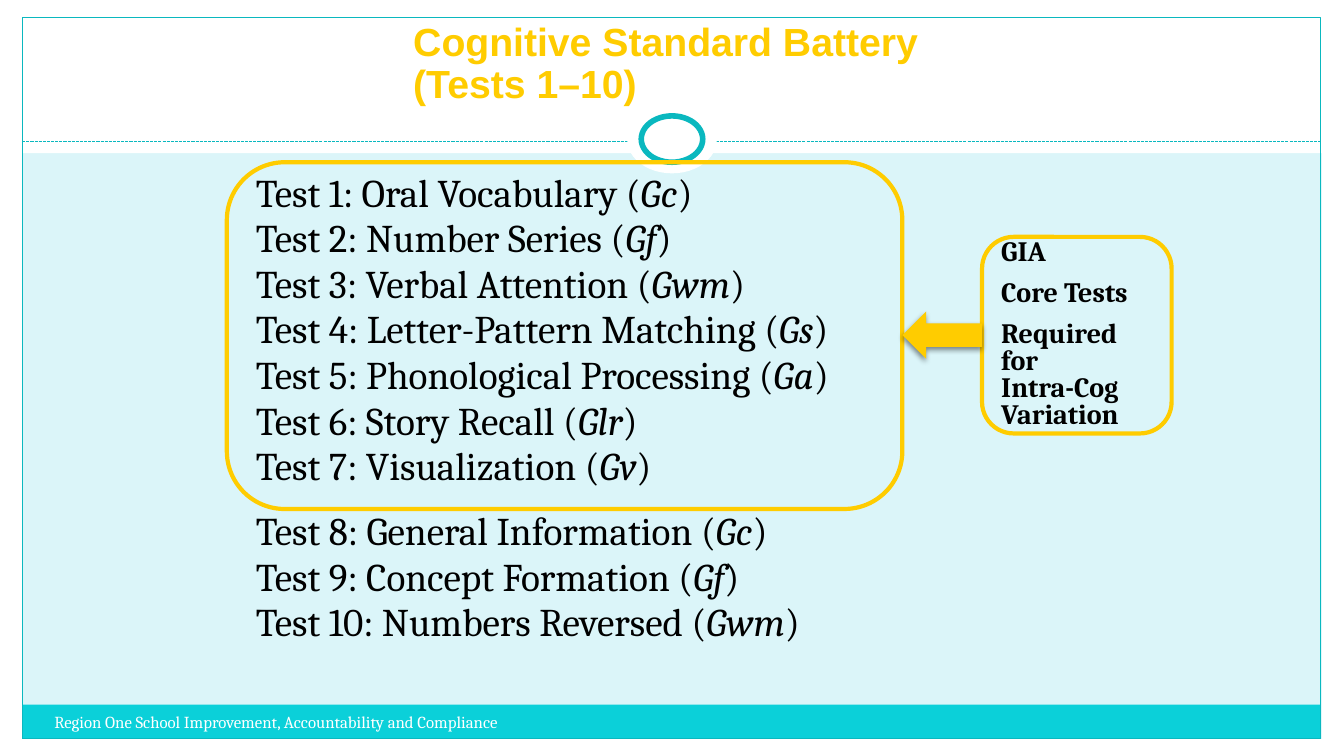
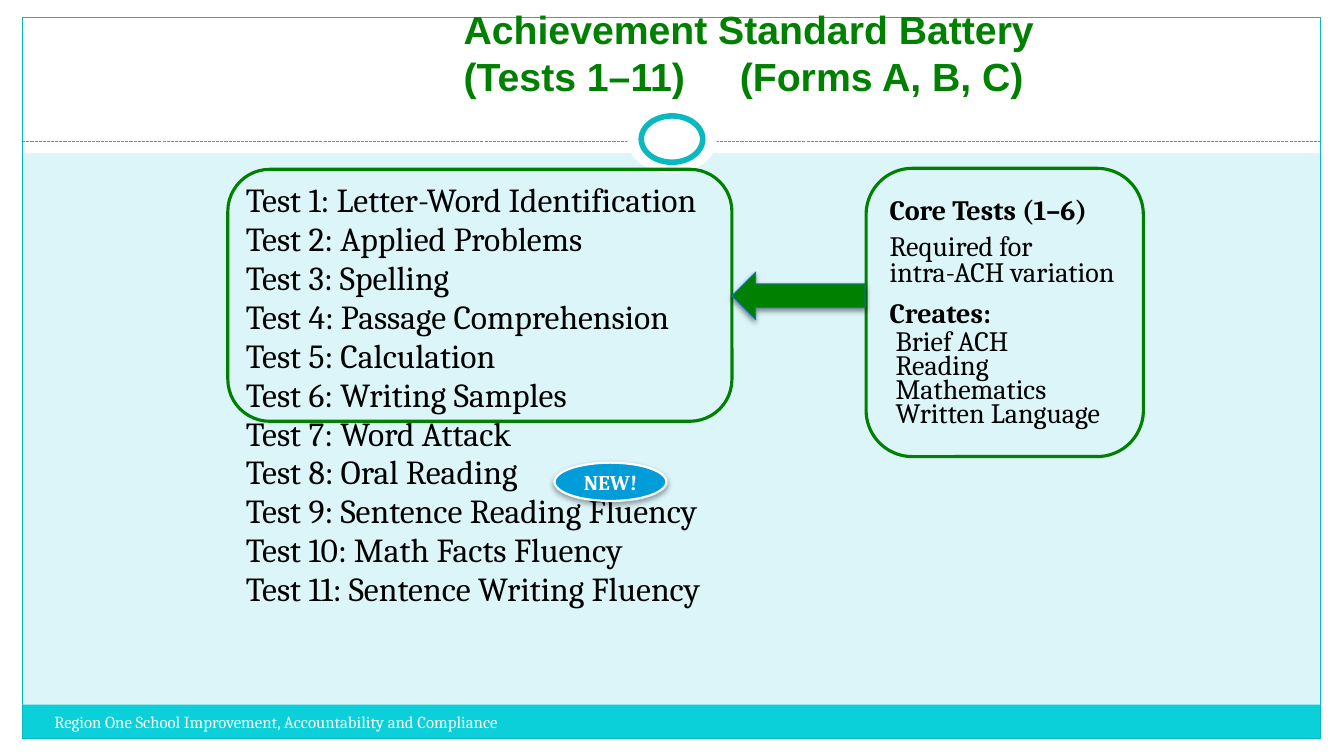
from lxml.etree import SubElement
from pptx import Presentation
from pptx.dml.color import RGBColor
from pptx.enum.dml import MSO_LINE
from pptx.enum.shapes import MSO_CONNECTOR, MSO_SHAPE
from pptx.enum.text import MSO_ANCHOR, PP_ALIGN
from pptx.oxml.ns import qn
from pptx.util import Pt

PX = 9144  # 100 px to the inch
WIDE, HIGH = 1333, 750

WHITE = RGBColor(0xFF, 0xFF, 0xFF)
BLACK = RGBColor(0x00, 0x00, 0x00)
PALE = RGBColor(0xDB, 0xF5, 0xF9)
AQUA = RGBColor(0x0B, 0xD0, 0xD9)
TEAL = RGBColor(0x0A, 0xB8, 0xBF)
GOLD = RGBColor(0xFF, 0xCC, 0x00)
GREEN = RGBColor(0x00, 0x80, 0x00)
BLUE = RGBColor(0x0F, 0x6F, 0xC6)
SKY = RGBColor(0x00, 0x9D, 0xD9)

HEAD, BODY = "Arial", "Cambria"


def draw(slide, kind, at, fill=None, line=None, width=0.75, shade=0):
    """Add a shape (or a text box when kind is None); shade is shadow opacity."""
    spot = [n * PX for n in at]
    if kind is None:
        return slide.shapes.add_textbox(*spot)
    shape = slide.shapes.add_shape(kind, *spot)
    shape.shadow.inherit = False
    if fill is None:
        shape.fill.background()
    else:
        shape.fill.solid()
        shape.fill.fore_color.rgb = fill
    if line is None:
        shape.line.fill.background()
    else:
        shape.line.color.rgb = line
        shape.line.width = Pt(width)
    if shade:
        glow = shape._element.spPr.find(qn("a:effectLst"))
        cast = SubElement(glow, qn("a:outerShdw"), blurRad=str(Pt(4)),
                          dist=str(Pt(2)), dir="5400000", rotWithShape="0")
        tint = SubElement(cast, qn("a:srgbClr"), val="000000")
        SubElement(tint, qn("a:alpha"), val=str(shade * 1000))
    return shape


def write(shape, rows, size, color=BLACK, font=BODY, anchor=MSO_ANCHOR.TOP,
          align=PP_ALIGN.LEFT):
    """Rows are (text, line spacing, points before, bold); *stars* mark italics."""
    frame = shape.text_frame
    frame.word_wrap = True
    frame.vertical_anchor = anchor
    for i, (text, gap, before, bold) in enumerate(rows):
        para = frame.add_paragraph() if i else frame.paragraphs[0]
        first, *rest = text.split("*")
        para.text = first
        for part in rest:
            para.add_run().text = part
        para.alignment = align
        para.line_spacing = gap
        para.space_before = Pt(before)
        for n, run in enumerate(para.runs):
            run.font.name = font
            run.font.size = Pt(size)
            run.font.bold = bold
            run.font.italic = bool(rest) and n == 1
            run.font.color.rgb = color
    return frame


deck = Presentation()
deck.slide_width, deck.slide_height = WIDE * PX, HIGH * PX

BANDS = [
    ((0, 733, WIDE, 17), WHITE),
    ((0, 0, WIDE, 152), WHITE),
    ((0, 0, 22, HIGH), WHITE),
    ((1311, 0, 22, HIGH), WHITE),
    ((22, 699, 1288, 34), AQUA),
]

# Frame shared by both slides
slides = []
for _ in range(2):
    slide = deck.slides.add_slide(deck.slide_layouts[6])
    slides.append(slide)
    slide.background.fill.solid()
    slide.background.fill.fore_color.rgb = PALE
    for at, fill in BANDS:
        draw(slide, MSO_SHAPE.RECTANGLE, at, fill)
    draw(slide, MSO_SHAPE.RECTANGLE, (22, 17, 1288, 716), line=TEAL)
    rule = slide.shapes.add_connector(
        MSO_CONNECTOR.STRAIGHT, 22 * PX, 140 * PX, 1310 * PX, 140 * PX)
    rule.line.color.rgb = TEAL
    rule.line.width = Pt(0.75)
    rule.line.dash_style = MSO_LINE.SQUARE_DOT
    SubElement(rule._element.spPr, qn("a:effectLst"))
    draw(slide, MSO_SHAPE.OVAL, (622, 105, 89, 67), WHITE)
    draw(slide, MSO_SHAPE.OVAL, (636, 115, 61, 46), WHITE, TEAL, 4)
    foot = draw(slide, None, (44, 701, 522, 40))
    write(foot, [("Region One School Improvement, Accountability and Compliance",
                  1.0, 0, False)], 12, WHITE)

cog, ach = slides

# Cognitive: title and tests
title = draw(cog, None, (400, -14, 721, 125))
write(title, [("Cognitive Standard Battery\v(Tests 1–10)", 0.9, 0, True)],
      28, GOLD, HEAD, MSO_ANCHOR.BOTTOM)
TESTS = [
    ("Oral Vocabulary", "Gc"), ("Number Series", "Gf"),
    ("Verbal Attention", "Gwm"), ("Letter-Pattern Matching", "Gs"),
    ("Phonological Processing", "Ga"), ("Story Recall", "Glr"),
    ("Visualization", "Gv"), ("General Information", "Gc"),
    ("Concept Formation", "Gf"), ("Numbers Reversed", "Gwm"),
]
CORE = 7  # the tests after these stand apart
rows = [(f"Test {n}: {name} (*{code}*)", 0.8, 19.5 if n == CORE + 1 else 5.6, False)
        for n, (name, code) in enumerate(TESTS, 1)]
write(draw(cog, None, (244, 171, 900, 495)), rows, 28)

# Cognitive: core group and its note
draw(cog, MSO_SHAPE.ROUNDED_RECTANGLE, (225, 161, 670, 344), line=GOLD, width=3)
note = draw(cog, MSO_SHAPE.ROUNDED_RECTANGLE, (974, 235, 188, 195),
            line=GOLD, width=3)
labels = ["GIA", "Core Tests", "Required for\vIntra-Cog Variation"]
write(note, [(text, 0.8, 10, True) for text in labels], 20,
      anchor=MSO_ANCHOR.MIDDLE)
draw(cog, MSO_SHAPE.LEFT_ARROW, (895, 309, 79, 47), GOLD, shade=45)

# Achievement: tests and title
NAMES = [
    "Letter-Word Identification", "Applied Problems", "Spelling",
    "Passage Comprehension", "Calculation", "Writing Samples", "Word Attack",
    "Oral Reading", "Sentence Reading Fluency", "Math Facts Fluency",
    "Sentence Writing Fluency",
]
rows = [(f"Test {n}: {name}", 0.8, 4.8, False) for n, name in enumerate(NAMES, 1)]
write(draw(ach, None, (234, 180, 900, 495)), rows, 24)
title = draw(ach, None, (450, 0, 592, 104))
frame = write(title, [("Achievement Standard Battery\v(Tests 1–11)\t(Forms A, B, C)",
                       1.0, 0, True)], 28, GREEN, HEAD)
tabs = SubElement(frame.paragraphs[0]._p.get_or_add_pPr(), qn("a:tabLst"))
SubElement(tabs, qn("a:tab"), pos=str(274 * PX), algn="l")

# Achievement: core group and its note
draw(ach, MSO_SHAPE.ROUNDED_RECTANGLE, (226, 168, 500, 250), line=GREEN, width=2.25)
note = draw(ach, MSO_SHAPE.ROUNDED_RECTANGLE, (859, 167, 275, 286),
            line=GREEN, width=2.25)
areas = ["Brief ACH", "Reading", "Mathematics", "Written Language"]
rows = [
    ("Core Tests (1–6)", 0.8, 6, True),
    ("Required for\vintra-ACH variation", 0.8, 6, False),
    ("Creates:", 0.8, 10, True),
] + [(area, 0.3, 10, False) for area in areas]
frame = write(note, rows, 20, anchor=MSO_ANCHOR.MIDDLE)
for para in frame.paragraphs[-len(areas):]:
    para._p.get_or_add_pPr().set("marL", str(6 * PX))
draw(ach, MSO_SHAPE.LEFT_ARROW, (726, 270, 132, 47), GREEN, BLUE, shade=45)

# Achievement: badge
badge = draw(ach, MSO_SHAPE.OVAL, (550, 459, 111, 38), SKY, WHITE, 1.57, 35)
frame = write(badge, [("NEW!", 1.0, 0, True)], 15, WHITE,
              anchor=MSO_ANCHOR.MIDDLE, align=PP_ALIGN.CENTER)
frame.margin_left = frame.margin_right = frame.margin_top = frame.margin_bottom = 0

deck.save("out.pptx")
